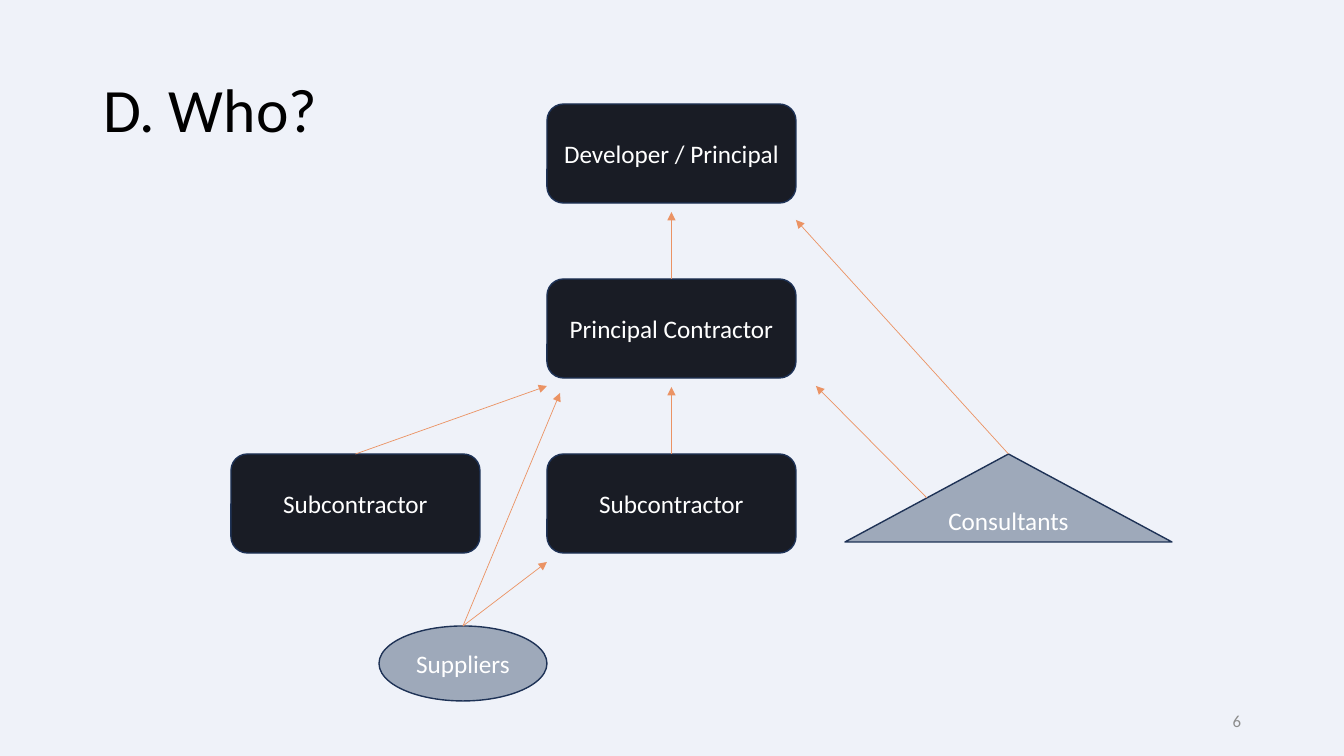
from lxml.etree import SubElement
from pptx import Presentation
from pptx.dml.color import RGBColor
from pptx.enum.shapes import MSO_CONNECTOR, MSO_SHAPE
from pptx.enum.text import MSO_ANCHOR, PP_ALIGN
from pptx.oxml.ns import qn
from pptx.util import Pt

EMU_PER_PIXEL = 914400 / 100.8
FONT = "Calibri"
BACKGROUND, DARK, GREY, OUTLINE = "EFF2F9", "191C25", "9EA9BA", "1E3256"
ARROW, WHITE, BLACK, NUMBER = "EB9364", "FFFFFF", "000000", "8C8C8C"
BOX_WIDTH, BOX_HEIGHT, ROW_STEP = 249, 99, 175


def px(*lengths):
    return [round(length * EMU_PER_PIXEL) for length in lengths]


def colour(value):
    return RGBColor.from_string(value)


def write(shape, text, size, text_colour, alignment):
    frame = shape.text_frame
    frame.word_wrap = True
    frame.vertical_anchor = MSO_ANCHOR.MIDDLE
    paragraph = frame.paragraphs[0]
    paragraph.text = text
    paragraph.alignment = alignment
    paragraph.font.name = FONT
    paragraph.font.size = Pt(size)
    paragraph.font.color.rgb = colour(text_colour)
    return paragraph


def add_party(slide, kind, text, fill, left, top, width=BOX_WIDTH, height=BOX_HEIGHT):
    shape = slide.shapes.add_shape(kind, *px(left, top, width, height))
    shape.shadow.inherit = False
    shape.fill.solid()
    shape.fill.fore_color.rgb = colour(fill)
    shape.line.color.rgb = colour(OUTLINE)
    shape.line.width = Pt(1)
    write(shape, text, 18, WHITE, PP_ALIGN.CENTER)
    return shape


def add_arrow(slide, start, end, source=None):
    """Draw an arrow, joined to the top of source if one is given."""
    connector = slide.shapes.add_connector(MSO_CONNECTOR.STRAIGHT, *px(*start, *end))
    if source is not None:
        connector.begin_connect(source, 0)
    connector.line.color.rgb = colour(ARROW)
    connector.line.width = Pt(0.5)
    SubElement(connector.line._get_or_add_ln(), qn("a:tailEnd"), type="triangle")
    SubElement(connector._element.spPr, qn("a:effectLst"))


def add_title(slide, left, top, width, height):
    title = slide.shapes.title
    title.left, title.top, title.width, title.height = px(left, top, width, height)
    write(title, "D. Who?", 44, BLACK, PP_ALIGN.LEFT).line_spacing = 0.9


def add_hierarchy(slide, left, top):
    """Place the parties and the arrows to those they report to."""
    centre_left = left + 316
    middle = centre_left + BOX_WIDTH / 2
    right = centre_left + BOX_WIDTH
    rows = [top + ROW_STEP * row for row in range(3)]
    bottoms = [row + BOX_HEIGHT for row in rows]
    rounded = MSO_SHAPE.ROUNDED_RECTANGLE

    labels = ["Developer / Principal", "Principal Contractor", "Subcontractor"]
    chain = [add_party(slide, rounded, label, DARK, centre_left, row)
             for label, row in zip(labels, rows)]
    side = add_party(slide, rounded, "Subcontractor", DARK, left, rows[2])
    suppliers = add_party(slide, MSO_SHAPE.OVAL, "Suppliers", GREY,
                          left + 148, rows[2] + 172, 168, 75)
    consultants = add_party(slide, MSO_SHAPE.ISOSCELES_TRIANGLE, "Consultants", GREY,
                            right + 49, rows[2], 327, 88)

    for party, row, bottom in zip(chain[1:], rows[1:], bottoms):
        add_arrow(slide, (middle, row), (middle, bottom + 9), party)
    add_arrow(slide, (left + BOX_WIDTH / 2, rows[2]), (centre_left, bottoms[1] + 8), side)
    supplier_top = (left + 232, rows[2] + 172)
    for end in [(centre_left, bottoms[2] + 9), (centre_left + 13, bottoms[1] + 15)]:
        add_arrow(slide, supplier_top, end, suppliers)
    add_arrow(slide, (right + 212, rows[2]), (right, bottoms[0] + 17), consultants)
    add_arrow(slide, (right + 131, rows[2] + 44), (right + 20, bottoms[1] + 8))


def add_slide_number(slide, left, top, width, height):
    box = slide.shapes.add_textbox(*px(left, top, width, height))
    write(box, "6", 12, NUMBER, PP_ALIGN.RIGHT)


def main():
    presentation = Presentation()
    presentation.slide_width, presentation.slide_height = px(1344, 756)
    slide = presentation.slides.add_slide(presentation.slide_layouts[5])
    slide.background.fill.solid()
    slide.background.fill.fore_color.rgb = colour(BACKGROUND)
    add_title(slide, 93, 40, 1159, 146)
    add_hierarchy(slide, 231, 104)
    add_slide_number(slide, 949, 701, 302, 40)
    presentation.save("out.pptx")


if __name__ == "__main__":
    main()
